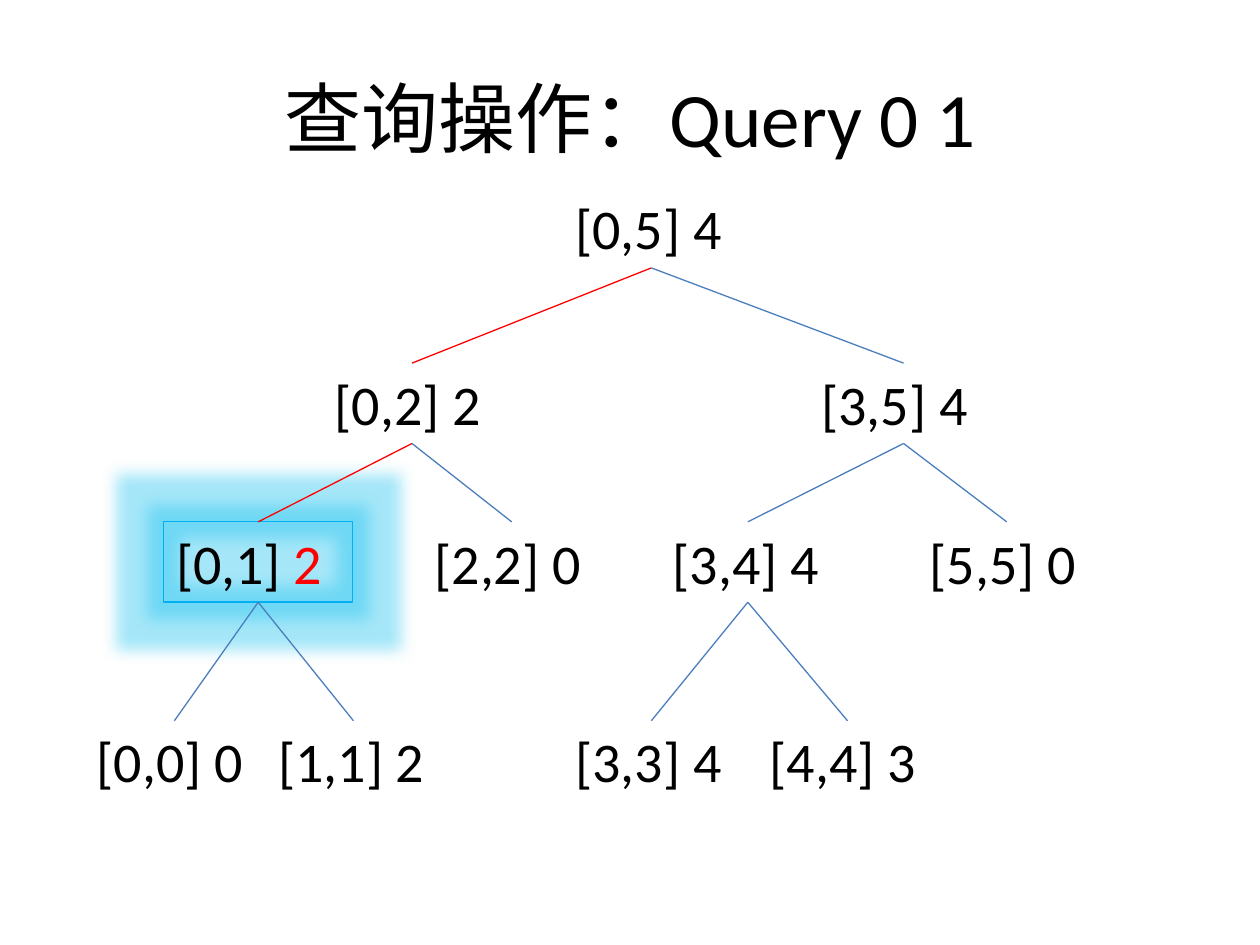
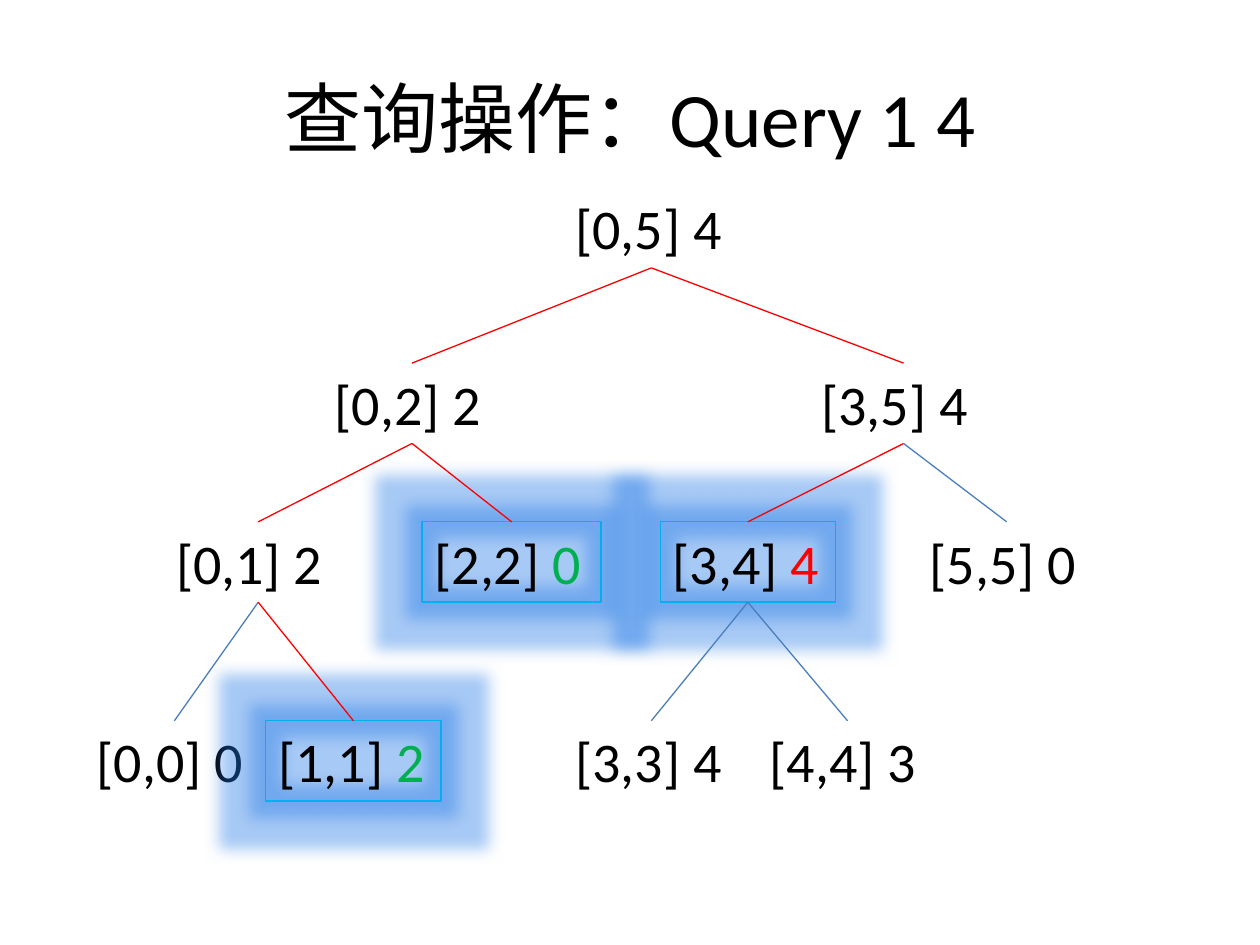
from lxml import etree
from pptx import Presentation
from pptx.dml.color import RGBColor
from pptx.enum.shapes import MSO_CONNECTOR
from pptx.enum.text import MSO_ANCHOR, MSO_AUTO_SIZE, PP_ALIGN
from pptx.oxml.ns import qn
from pptx.util import Cm, Pt

STRAIGHT = MSO_CONNECTOR.STRAIGHT
GROW = MSO_AUTO_SIZE.SHAPE_TO_FIT_TEXT
MIDDLE = MSO_ANCHOR.MIDDLE
CENTER = PP_ALIGN.CENTER
BOTTOM_SIDE, TOP_SIDE = 2, 0

FONT = "Calibri"
COLORS = {
    "text": "000000",
    "edge": "4B7EBC",
    "visited": "FF0000",
    "partial": "00B050",
    "outline": "00B0F0",
    "cyan glow": "1EC3F0",
    "blue glow": "237AE6",
}
GLOW_RADIUS = Pt(18)
LINE_WIDTH = Pt(0.75)

# Segment tree: interval -> (value, level, left, width), lengths in cm
LEVEL_TOPS = [3.78, 7.32, 10.52, 14.53]
NODE_HEIGHT = 1.62
TREE = {
    "[0,5]": ("4", 0, 11.35, 3.56),
    "[0,2]": ("2", 1, 6.5, 3.61),
    "[3,5]": ("4", 1, 16.31, 3.81),
    "[0,1]": ("2", 2, 3.3, 3.81),
    "[2,2]": ("0", 2, 8.51, 3.61),
    "[3,4]": ("4", 2, 13.31, 3.53),
    "[5,5]": ("0", 2, 18.49, 3.61),
    "[3,3]": ("4", 3, 11.35, 3.56),
    "[4,4]": ("3", 3, 15.27, 3.63),
    "[0,0]": ("0", 3, 1.7, 3.63),
    "[1,1]": ("2", 3, 5.36, 3.53),
}
CHILDREN = {
    "[0,5]": ["[0,2]", "[3,5]"],
    "[0,2]": ["[0,1]", "[2,2]"],
    "[3,5]": ["[3,4]", "[5,5]"],
    "[0,1]": ["[0,0]", "[1,1]"],
    "[3,4]": ["[3,3]", "[4,4]"],
}

# Each query: title, glow, visited children, found nodes with value colour
QUERIES = [
    ("查询操作：Query 0 1", "cyan glow", ["[0,2]", "[0,1]"],
     {"[0,1]": "visited"}),
    ("查询操作：Query 1 4", "blue glow",
     ["[0,2]", "[3,5]", "[0,1]", "[2,2]", "[3,4]", "[1,1]"],
     {"[2,2]": "partial", "[3,4]": "visited", "[1,1]": "partial"}),
]


def format_run(run, size, color):
    run.font.name = FONT
    run.font.size = Pt(size)
    run.font.color.rgb = RGBColor.from_string(COLORS[color])


def style_line(item, color, glow=None):
    """Draw the line, with a glow or with no effect at all."""
    item.line.color.rgb = RGBColor.from_string(COLORS[color])
    item.line.width = LINE_WIDTH
    effects = etree.SubElement(item._element.spPr, qn("a:effectLst"))
    if glow:
        halo = etree.SubElement(effects, qn("a:glow"), rad=str(GLOW_RADIUS))
        tint = etree.SubElement(halo, qn("a:srgbClr"), val=COLORS[glow])
        etree.SubElement(tint, qn("a:alpha"), val="40000")


prs = Presentation()
prs.slide_width, prs.slide_height = Cm(25.4), Cm(19.05)
title_only = prs.slide_layouts[5]

for query, glow, visited, found in QUERIES:
    slide = prs.slides.add_slide(title_only)

    # Title
    title = slide.shapes.title
    title.left, title.top, title.width, title.height = (
        Cm(1.27), Cm(0.76), Cm(22.86), Cm(3.18))
    title.text_frame.text = query
    title.text_frame.vertical_anchor = MIDDLE
    heading = title.text_frame.paragraphs[0]
    heading.alignment = CENTER
    format_run(heading.runs[0], 44, "text")

    # Tree nodes, the found ones framed and glowing
    nodes = {}
    for interval, (value, level, left, width) in TREE.items():
        node = slide.shapes.add_textbox(
            Cm(left), Cm(LEVEL_TOPS[level]), Cm(width), Cm(NODE_HEIGHT))
        node.text_frame.word_wrap = True
        node.text_frame.auto_size = GROW
        label = node.text_frame.paragraphs[0]
        label.text = interval + " "
        format_run(label.runs[0], 32, "text")
        answer = label.add_run()
        answer.text = value
        format_run(answer, 32, found.get(interval, "text"))
        if interval in found:
            style_line(node, "outline", glow)
        nodes[interval] = node

    # Edges from parent to child, red along the query
    for parent, children in CHILDREN.items():
        for child in children:
            edge = slide.shapes.add_connector(STRAIGHT, 0, 0, 0, 0)
            edge.begin_connect(nodes[parent], BOTTOM_SIDE)
            edge.end_connect(nodes[child], TOP_SIDE)
            style_line(edge, "visited" if child in visited else "edge")

prs.save("out.pptx")
